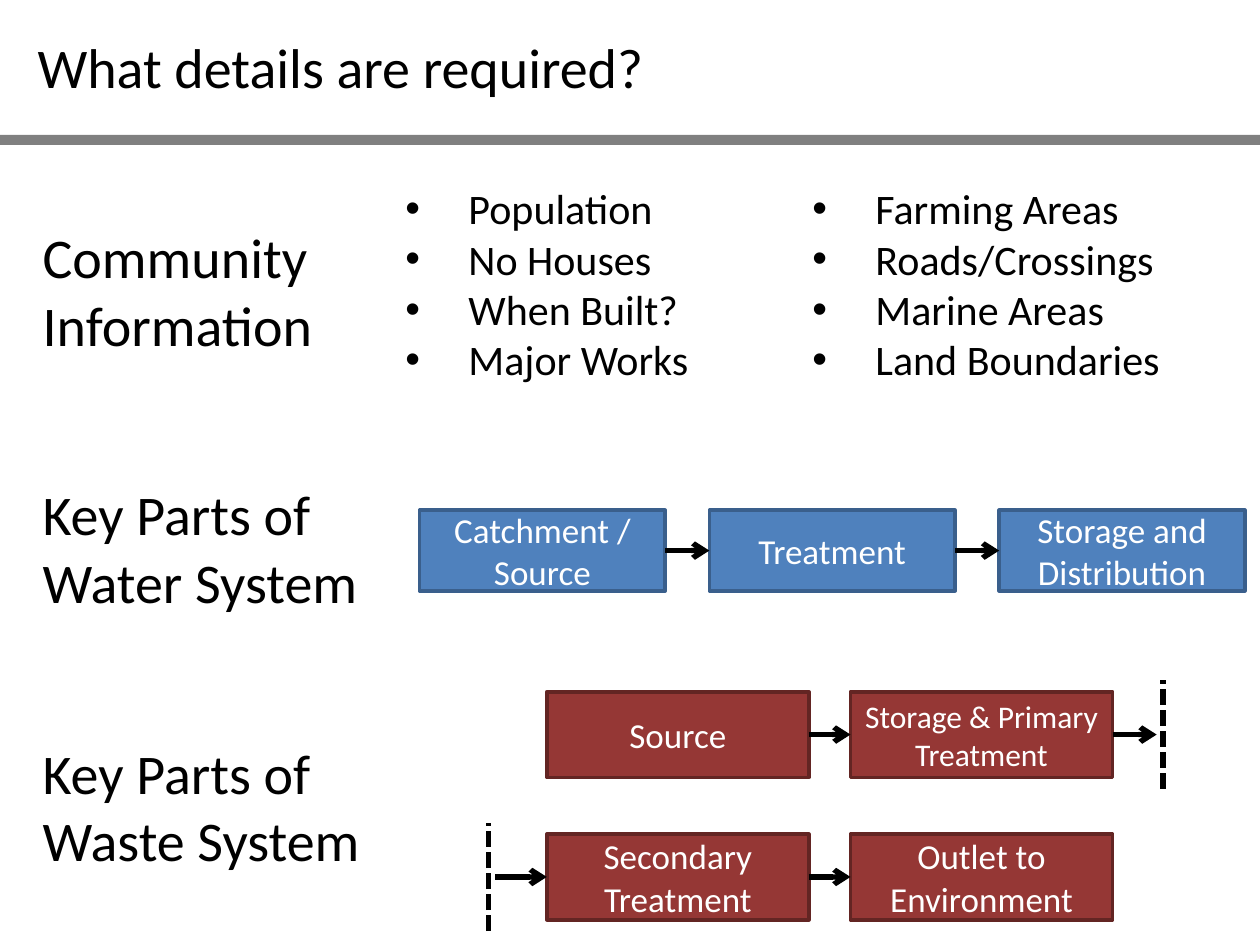
from lxml import etree
from pptx import Presentation, util as u
from pptx.dml.color import RGBColor
from pptx.enum import dml, shapes, text
from pptx.oxml.ns import qn

# Content
TITLE = "What details are required?"
HEADS = [("Community Information", 1.72, 2.66),
         ("Key Parts of Water System", 3.76, 3.19),
         ("Key Parts of Waste System", 5.81, 3.19)]
LISTS = [["Population", "No Houses", "When Built?", "Major Works"],
         ["Farming Areas", "Roads/Crossings", "Marine Areas", "Land Boundaries"]]
WATER = [[("Catchment / Source", 20), ("Treatment", 20),
          ("Storage and Distribution", 20)]]
WASTE = [[("Source", 20), ("Storage & Primary Treatment", 18)],
         [("Secondary Treatment", 20), ("Outlet to Environment", 20)]]

# Format
HEX = {"ink": "000000", "paper": "FFFFFF", "bar": "808080",
       "water": "4F81BD", "rim": "3A5F8C", "waste": "953735", "edge": "632523"}
FLOW = {"water": dict(x=3.33, y=4.05, w=1.95, h=0.64, dx=2.3, dy=0,
                      fill="water", line="rim"),
        "waste": dict(x=4.34, y=5.49, w=2.08, h=0.68, dx=2.41, dy=1.13,
                      fill="waste", line="edge")}
LEFT, RIGHT = 1, 3

deck = Presentation()
deck.slide_width, deck.slide_height = u.Inches(10), u.Inches(7.5)
page = deck.slides.add_slide(deck.slide_layouts[6]).shapes


def color(name):
    return RGBColor.from_string(HEX[name])


def inch(*nums):
    return [u.Inches(n) for n in nums]


def style(obj, **vals):
    for key, val in vals.items():
        setattr(obj, key, val)


def write(frame, lines, size, ink="ink", align=None):
    for i, line in enumerate(lines):
        par = frame.paragraphs[0] if i == 0 else frame.add_paragraph()
        par.alignment = align
        run = par.add_run()
        run.text = line
        style(run.font, size=u.Pt(size), name="Calibri")
        run.font.color.rgb = color(ink)


def label(lines, size, *at):
    frame = page.add_textbox(*inch(*at)).text_frame
    style(frame, word_wrap=True, auto_size=text.MSO_AUTO_SIZE.SHAPE_TO_FIT_TEXT)
    write(frame, lines, size)
    return frame


def block(host, at, fill, line=None):
    box = host.add_shape(shapes.MSO_SHAPE.RECTANGLE, *inch(*at))
    box.shadow.inherit = False
    box.fill.solid()
    box.fill.fore_color.rgb = color(fill)
    if line:
        box.line.color.rgb = color(line)
        box.line.width = u.Pt(2)
    else:
        box.line.fill.background()
    return box


def stroke(host, start, end, dash=False):
    link = host.add_connector(shapes.MSO_CONNECTOR.STRAIGHT, *inch(*start, *end))
    link.line.color.rgb = color("ink")
    link.line.width = u.Pt(3)
    props = link._element.spPr
    if dash:
        link.line.dash_style = dml.MSO_LINE.SQUARE_DOT
    else:
        etree.SubElement(props.find(qn("a:ln")), qn("a:tailEnd"), type="arrow")
    etree.SubElement(props, qn("a:effectLst"))
    return link


def flow(rows, x, y, w, h, dx, dy, fill, line):
    """Draw rows of boxes joined by arrows; return the group and its boxes."""
    host = page.add_group_shape().shapes
    grid = []
    for r, row in enumerate(rows):
        top = y + r * dy
        mid = top + h / 2
        line_up = []
        for c, (words, size) in enumerate(row):
            left = x + c * dx
            box = block(host, (left, top, w, h), fill, line)
            style(box.text_frame, word_wrap=True,
                  vertical_anchor=text.MSO_ANCHOR.MIDDLE)
            write(box.text_frame, [words], size, "paper", text.PP_ALIGN.CENTER)
            if c:
                link = stroke(host, (left - dx + w, mid), (left, mid))
                link.begin_connect(line_up[-1], RIGHT)
                link.end_connect(box, LEFT)
            line_up.append(box)
        grid.append(line_up)
    return host, grid


# Title and rule
block(page, (0, 1.07, 10, 0.08), "bar")
label([TITLE], 32, 0.2, 0.21, 7.17, 0.64)

# Row headings
for words, top, wide in HEADS:
    label([words], 32, 0.24, top, wide, 1.18)

# Bulleted columns
for i, items in enumerate(LISTS):
    frame = label(items, 24, 3.12 + i * 3.23, 1.4, 3.1, 1.72)
    for par in frame.paragraphs:
        props = par._p.get_or_add_pPr()
        props.set("marL", str(u.Inches(0.5)))
        props.set("indent", str(-u.Inches(0.5)))
        etree.SubElement(props, qn("a:buFont"), typeface="Arial")
        etree.SubElement(props, qn("a:buChar"), char="•")

# Water and waste systems
flow(WATER, **FLOW["water"])
host, grid = flow(WASTE, **FLOW["waste"])

# Dashed breaks where the waste flow runs on to the next row
up, down = (FLOW["waste"]["y"] + r * FLOW["waste"]["dy"] + 0.34 for r in (0, 1))
stroke(host, (8.83, up), (9.18, up)).begin_connect(grid[0][-1], RIGHT)
stroke(host, (3.93, down), (4.34, down)).end_connect(grid[1][0], LEFT)
for x, mid in ((9.23, up), (3.88, down)):
    stroke(host, (x, mid + 0.43), (x, mid - 0.43), dash=True)

deck.save("out.pptx")
